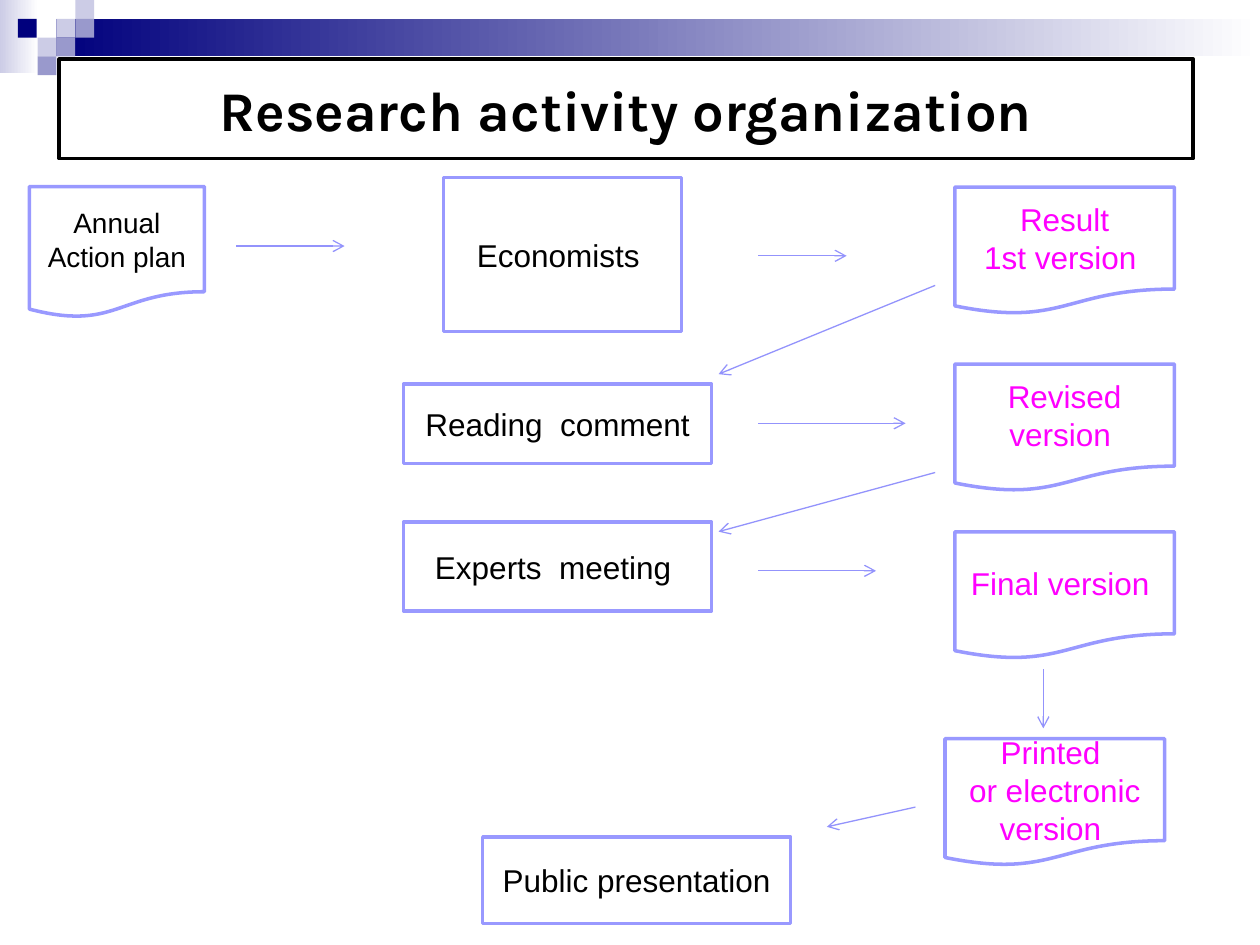
from lxml import etree
from pptx import Presentation
from pptx.dml.color import RGBColor
from pptx.enum import shapes, text
from pptx.oxml import ns
from pptx.util import Pt

BLACK = RGBColor(0x00, 0x00, 0x00)
WHITE = RGBColor(0xFF, 0xFF, 0xFF)
NAVY = RGBColor(0x00, 0x00, 0x7D)
LAVENDER = RGBColor(0xCC, 0xCC, 0xE6)
MUTED_BLUE = RGBColor(0x99, 0x99, 0xCC)
OUTLINE = RGBColor(0x99, 0x99, 0xFF)
ARROW = RGBColor(0x93, 0x93, 0xFC)
MAGENTA = RGBColor(0xFF, 0x00, 0xFF)

RECTANGLE = shapes.MSO_SHAPE.RECTANGLE
DOCUMENT = shapes.MSO_SHAPE.FLOWCHART_DOCUMENT


def place(shape, box):
    shape.left, shape.top, shape.width, shape.height = (Pt(v) for v in box)


def write(shape, words, font_name, size, color, bold=False):
    """Centre the words in the shape, one paragraph per line."""
    frame = shape.text_frame
    frame.text = words
    frame.word_wrap = True
    frame.auto_size = text.MSO_AUTO_SIZE.NONE
    frame.vertical_anchor = text.MSO_ANCHOR.MIDDLE
    for paragraph in frame.paragraphs:
        paragraph.alignment = text.PP_ALIGN.CENTER
        for run in paragraph.runs:
            run.font.name = font_name
            run.font.size = Pt(size)
            run.font.bold = bold
            run.font.color.rgb = color


def add_band_part(slide, box, color, fade=False):
    shape = slide.shapes.add_shape(RECTANGLE, *(Pt(v) for v in box))
    shape.shadow.inherit = False
    shape.line.fill.background()
    if fade:
        shape.fill.gradient()
        shape.fill.gradient_angle = 0
        for stop, stop_color in zip(shape.fill.gradient_stops, (color, WHITE)):
            stop.color.rgb = stop_color
    else:
        shape.fill.solid()
        shape.fill.fore_color.rgb = color


def add_header_band(slide, box):
    left, top, width, height = box
    cell = height / 4
    # Fading bars
    add_band_part(slide, (left, top, 22, 42), LAVENDER, fade=True)
    add_band_part(slide, (left + 3 * cell, top + cell, width - 3 * cell, 2 * cell),
                  NAVY, fade=True)
    # Checkered squares: column, row, colour
    squares = [(3, 1, LAVENDER), (4, 0, LAVENDER), (4, 1, MUTED_BLUE),
               (2, 2, LAVENDER), (0.95, 1, NAVY), (3, 2, MUTED_BLUE),
               (2, 3, MUTED_BLUE)]
    for column, row, color in squares:
        add_band_part(slide, (left + column * cell, top + row * cell, cell, cell), color)


def add_title(slide, box):
    title = slide.shapes.title
    place(title, box)
    write(title, " Research activity organization ", "Karla", 32, BLACK, bold=True)
    title.line.color.rgb = BLACK
    title.line.width = Pt(2)


def add_step(slide, kind, box, words, color=BLACK, size=18):
    shape = slide.shapes.add_shape(kind, *(Pt(v) for v in box))
    shape.shadow.inherit = False
    shape.fill.solid()
    shape.fill.fore_color.rgb = WHITE
    shape.line.color.rgb = OUTLINE
    shape.line.width = Pt(2)
    write(shape, words, "Arial", size, color)


def add_arrow(slide, *ends):
    arrow = slide.shapes.add_connector(shapes.MSO_CONNECTOR.STRAIGHT,
                                       *(Pt(v) for v in ends))
    arrow.line.color.rgb = ARROW
    arrow.line.width = Pt(0.75)
    line = arrow.line._get_or_add_ln()
    etree.SubElement(line, ns.qn("a:tailEnd"), type="arrow")
    etree.SubElement(arrow._element.spPr, ns.qn("a:effectLst"))


def add_flow(slide, box):
    left, top, width, height = box

    # Activities, with the starting plan
    add_step(slide, DOCUMENT, (left, top + 5, 100, 75), "Annual Action plan", size=16)
    activities = [(236.8, 0, 136, 88, "Economists "),
                  (213.8, 118, 176, 45.4, "Reading  comment"),
                  (213.8, 196.6, 176, 51, "Experts  meeting "),
                  (259, 376.6, 176, 49.4, "Public presentation")]
    for x, y, step_width, step_height, words in activities:
        add_step(slide, RECTANGLE, (left + x, top + y, step_width, step_height), words)

    # Successive versions, along the right edge
    document_width, document_height = 125.5, 72.7
    right_column = left + width - document_width
    versions = [(0, 5.3, "Result\n1st version "),
                (0, 106.5, "Revised\nversion "),
                (0, 202.3, "Final version "),
                (-5.6, 320.5, "Printed \nor electronic\nversion ")]
    for shift, y, words in versions:
        add_step(slide, DOCUMENT, (right_column + shift, top + y,
                                   document_width, document_height), words, MAGENTA)

    # Arrows from step to step
    arrow_left, version_side, activity_side = 433.4, 534.4, 410.6
    add_arrow(slide, 135, 140.6, 196.9, 140.6)
    for y, end in [(146.2, 483.8), (241.9, 517.5), (326.2, 500.6)]:
        add_arrow(slide, arrow_left, y, end, y)
    for start_y, end_y in [(163.1, 213.8), (270, 303.8)]:
        add_arrow(slide, version_side, start_y, activity_side, end_y)
    add_arrow(slide, 596.2, 382.5, 596.2, 416.2)
    add_arrow(slide, 523.1, 461.2, 472.5, 472.5)


def main():
    presentation = Presentation()
    presentation.slide_width, presentation.slide_height = Pt(720), Pt(540)
    slide = presentation.slides.add_slide(presentation.slide_layouts[5])
    add_header_band(slide, (0, 0, 720, 43))
    add_title(slide, (33.8, 33.8, 648, 56.9))
    add_flow(slide, (16.8, 101.6, 654.3, 426))
    presentation.save("out.pptx")


if __name__ == "__main__":
    main()
